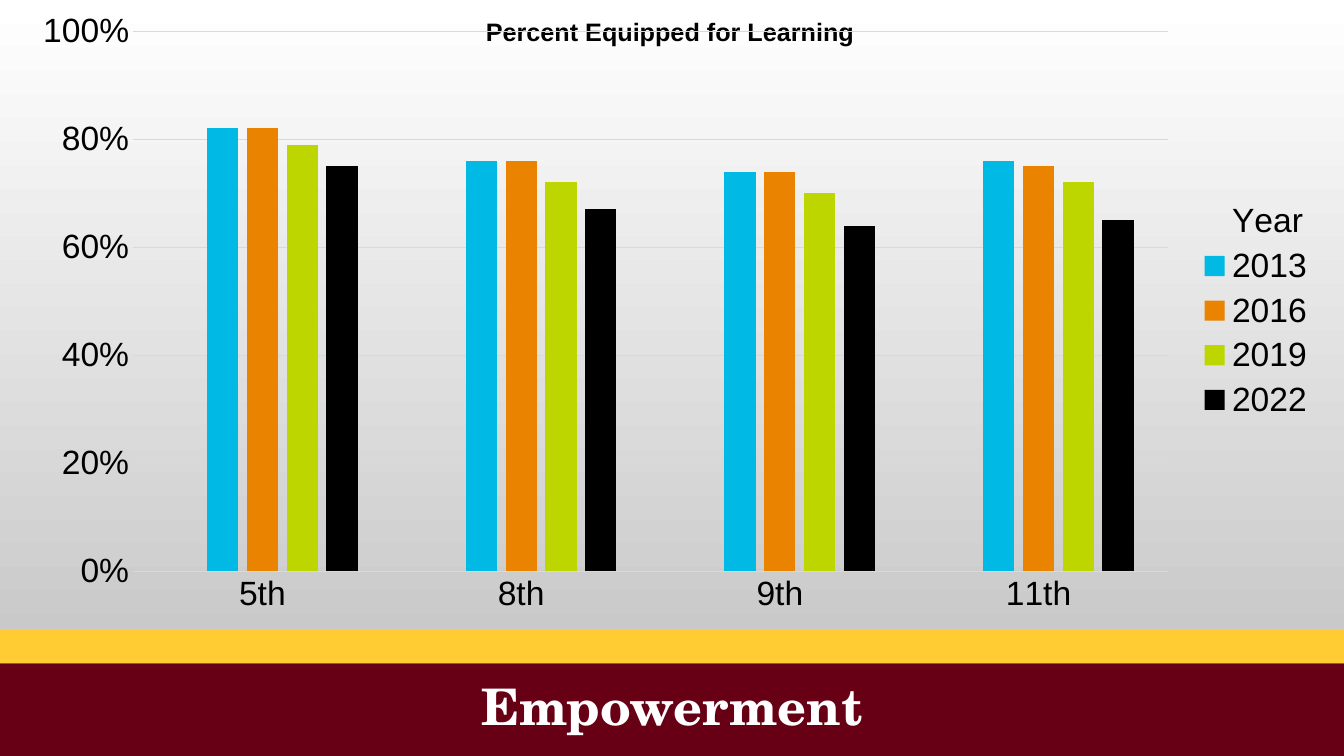
"""Build the Empowerment slide with a chart of students equipped for learning."""
from lxml import etree
from pptx import Presentation
from pptx.chart.data import CategoryChartData
from pptx.dml.color import RGBColor
from pptx.enum import chart as ch, shapes, text
from pptx.oxml.ns import qn
from pptx.util import Inches, Pt

WHITE = RGBColor(0xFF, 0xFF, 0xFF)
BLACK = RGBColor(0, 0, 0)
GREY = RGBColor(0xBF, 0xBF, 0xBF)
GRID = RGBColor(0xD9, 0xD9, 0xD9)
MAROON = RGBColor(0x67, 0x00, 0x15)
GOLD = RGBColor(0xFF, 0xCC, 0x33)
BLUE = RGBColor(0x00, 0xB9, 0xE4)
ORANGE = RGBColor(0xE9, 0x83, 0x00)
LIME = RGBColor(0xBE, 0xD6, 0x00)

GRADES = ["5th", "8th", "9th", "11th"]
SERIES = [
    ("2013", [0.82, 0.76, 0.74, 0.76], BLUE),
    ("2016", [0.82, 0.76, 0.74, 0.75], ORANGE),
    ("2019", [0.79, 0.72, 0.70, 0.72], LIME),
    ("2022", [0.75, 0.67, 0.64, 0.65], BLACK),
    ("Year", [None, None], None),
]


def box(left, top, width, height):
    return [Inches(v) for v in (left, top, width, height)]


def place(sp, *at):
    sp.left, sp.top, sp.width, sp.height = box(*at)


def set_font(font, size, color=BLACK, name="Arial", bold=False):
    font.size, font.name, font.bold = Pt(size), name, bold
    font.color.rgb = color


def write(tf, words, align=None, spacing=None, anchor=None, wrap=True, **font):
    tf.word_wrap = wrap
    tf.vertical_anchor = anchor
    p = tf.paragraphs[0]
    p.alignment, p.line_spacing = align, spacing
    r = p.add_run()
    r.text = words
    set_font(r.font, **font)


def add_background(s):
    fill = s.background.fill
    fill.gradient()
    fill.gradient_angle = 270
    for stop, color, pos in zip(fill.gradient_stops, (WHITE, GREY), (0, 1)):
        stop.color.rgb, stop.position = color, pos


def add_band(s, top, height, color):
    sp = s.shapes.add_shape(shapes.MSO_SHAPE.RECTANGLE, *box(0, top, 13.33, height))
    sp.shadow.inherit = False
    sp.fill.solid()
    sp.fill.fore_color.rgb = color
    sp.line.fill.background()
    s.shapes._spTree.insert(2, sp._element)


def make_layout(x, y, w, h, inner=False):
    layout = etree.Element(qn("c:layout"))
    manual = etree.SubElement(layout, qn("c:manualLayout"))
    settings = [("layoutTarget", "inner")] if inner else []
    settings += [("xMode", "edge"), ("yMode", "edge")]
    settings += [(tag, percent / 100) for tag, percent in zip("xywh", (x, y, w, h))]
    for tag, val in settings:
        etree.SubElement(manual, qn("c:" + tag)).set("val", str(val))
    return layout


def clear_layout(el):
    for old in el.findall(qn("c:layout")):
        el.remove(old)


def style_line(line):
    line.color.rgb, line.width = GRID, Pt(0.75)


def style_series(plot):
    for series, (_, _, color) in zip(plot.series, SERIES):
        fill = series.format.fill
        if color is None:
            fill.background()
        else:
            fill.solid()
            fill.fore_color.rgb = color
    columns = [series._element for series in plot.series]
    columns[0].addprevious(columns[-1])


def style_axes(chart):
    for axis in (chart.category_axis, chart.value_axis):
        axis.major_tick_mark = axis.minor_tick_mark = ch.XL_TICK_MARK.NONE
        set_font(axis.tick_labels.font, 24)
    style_line(chart.category_axis.format.line)
    val = chart.value_axis
    val.minimum_scale, val.maximum_scale, val.major_unit = 0, 1, 0.2
    val.tick_labels.number_format = "0%"
    val.tick_labels.number_format_is_linked = False
    val.format.line.fill.background()
    style_line(val.major_gridlines.format.line)


def add_legend(chart):
    chart.has_legend = True
    legend = chart.legend
    legend.position = ch.XL_LEGEND_POSITION.RIGHT
    legend.include_in_layout = False
    set_font(legend.font, 24)
    el = legend._element
    clear_layout(el)
    el.find(qn("c:legendPos")).addnext(make_layout(89.5, 31.3, 10, 36.8))


def add_column_chart(s, *at):
    data = CategoryChartData(number_format="0%")
    data.categories = GRADES
    for name, values, _ in SERIES:
        data.add_series(name, values)
    chart = s.shapes.add_chart(ch.XL_CHART_TYPE.COLUMN_CLUSTERED, *box(*at), data).chart
    chart.has_title = False
    set_font(chart.font, 24)
    plot = chart.plots[0]
    plot.vary_by_categories = False
    plot.gap_width, plot.overlap = 219, -27
    style_series(plot)
    style_axes(chart)
    add_legend(chart)
    area = chart._chartSpace.chart.plotArea
    clear_layout(area)
    area.insert(0, make_layout(8.85, 5, 78.95, 86.4, inner=True))


def main():
    prs = Presentation()
    prs.slide_width, prs.slide_height = Inches(13.33), Inches(7.5)
    s = prs.slides.add_slide(prs.slide_layouts[5])
    add_background(s)
    add_band(s, 6.25, 0.33, GOLD)
    add_band(s, 6.58, 0.92, MAROON)
    title = s.shapes.title
    place(title, 0, 6.58, 13.33, 0.92)
    write(title.text_frame, "Empowerment", align=text.PP_ALIGN.CENTER, spacing=0.9,
          anchor=text.MSO_ANCHOR.MIDDLE, size=36, color=WHITE,
          name="TeX Gyre Schola", bold=True)
    heading = s.shapes.add_textbox(*box(4.72, 0.11, 3.89, 0.4))
    write(heading.text_frame, "Percent Equipped for Learning", wrap=False,
          size=18, bold=True)
    add_column_chart(s, 0.17, 0, 13, 6.2)
    prs.save("out.pptx")


if __name__ == "__main__":
    main()
